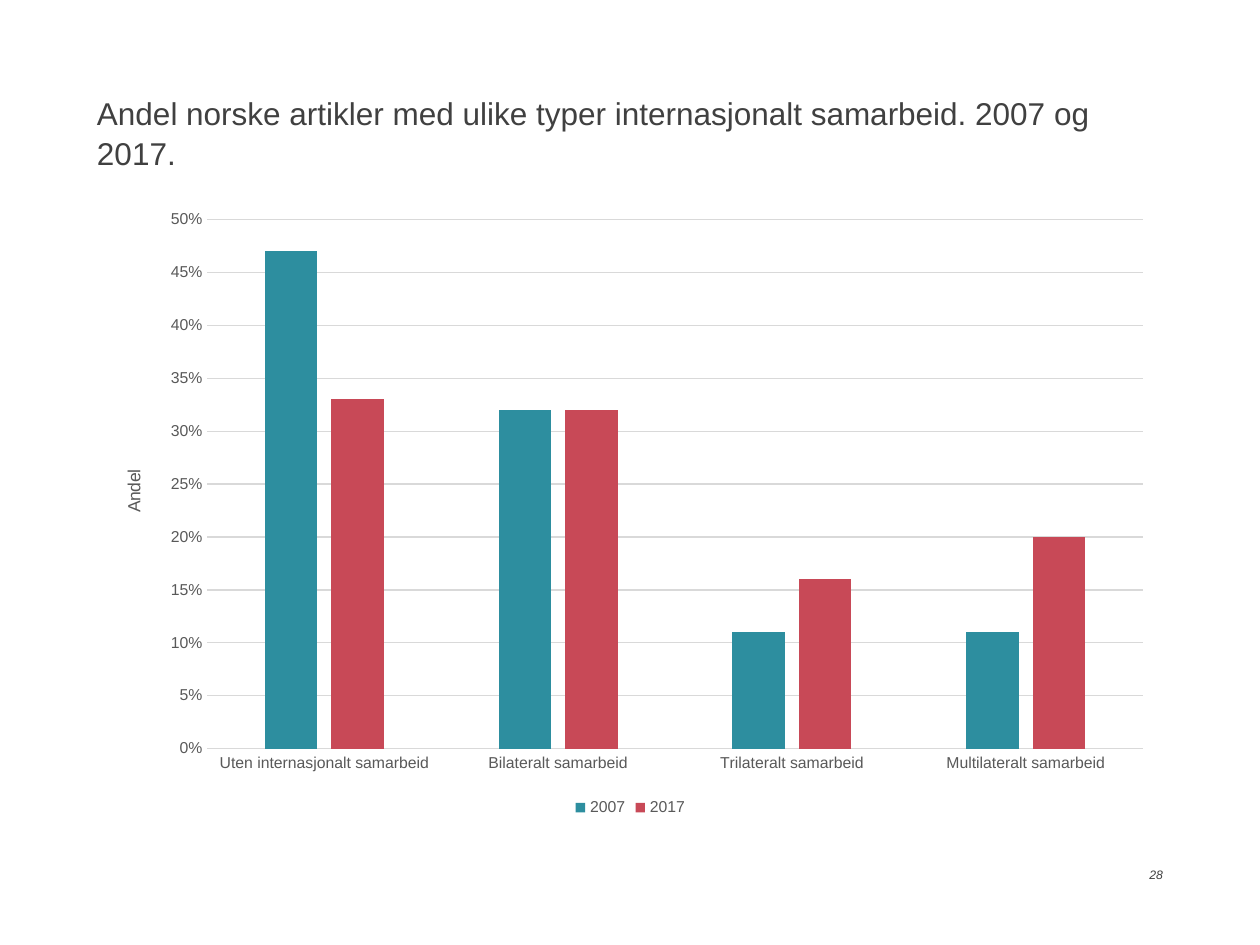
import pptx
import pptx.chart.data
import pptx.dml.color
import pptx.enum.chart
import pptx.enum.text
import pptx.util

SCALE = 914400 // 126
FACE = "Arial"
DARK, GREY, RULE = "404040", "595959", "D9D9D9"
CATS = [f"{kind} samarbeid" for kind in
        ("Uten internasjonalt", "Bilateralt", "Trilateralt", "Multilateralt")]
SERIES = [
    ("2007", (0.47, 0.32, 0.11, 0.11), "2D8E9F"),
    ("2017", (0.33, 0.32, 0.16, 0.20), "C84957"),
]


def px(*sizes):
    """Turn whole pixels into EMU."""
    return [pptx.util.Emu(size * SCALE) for size in sizes]


def tint(code):
    """Turn a hex string into a colour."""
    return pptx.dml.color.RGBColor.from_string(code)


def style(font, size, code, slant=False):
    """Set face, size and colour of a font."""
    font.name = FACE
    font.size = pptx.util.Pt(size)
    font.bold = False
    font.italic = slant
    font.color.rgb = tint(code)


def rule(line):
    """Give a chart line its thin grey look."""
    line.color.rgb = tint(RULE)
    line.width = pptx.util.Pt(0.75)


def add_text(slide, box, text, size, align, anchor, slant=False):
    """Add one wrapped paragraph without margins."""
    frame = slide.shapes.add_textbox(*px(*box)).text_frame
    frame.word_wrap = True
    frame.vertical_anchor = anchor
    frame.margin_left = frame.margin_right = 0
    frame.margin_top = frame.margin_bottom = 0
    frame.text = text
    para = frame.paragraphs[0]
    para.alignment = align
    para.line_spacing = 1.05
    style(para.runs[0].font, size, DARK, slant)


def style_axes(chart):
    """Format both axes, the grid and the axis title."""
    none = pptx.enum.chart.XL_TICK_MARK.NONE
    cat, val = chart.category_axis, chart.value_axis
    for axis in (cat, val):
        axis.major_tick_mark = axis.minor_tick_mark = none
        style(axis.tick_labels.font, 9, GREY)
    rule(cat.format.line)
    val.format.line.fill.background()
    rule(val.major_gridlines.format.line)
    val.minimum_scale, val.maximum_scale, val.major_unit = 0, 0.5, 0.05
    val.tick_labels.number_format = "0%"
    val.tick_labels.number_format_is_linked = False
    frame = val.axis_title.text_frame
    frame.text = "Andel"
    style(frame.paragraphs[0].runs[0].font, 10, GREY)
    frame._txBody.bodyPr.set("rot", "-5400000")


def add_bars(slide, box):
    """Add the clustered column chart with its legend."""
    data = pptx.chart.data.CategoryChartData(number_format="0%")
    data.categories = CATS
    for name, vals, _ in SERIES:
        data.add_series(name, vals)
    kind = pptx.enum.chart.XL_CHART_TYPE.COLUMN_CLUSTERED
    chart = slide.shapes.add_chart(kind, *px(*box), data).chart
    style(chart.font, 10, "000000")
    chart.has_title = False
    style_axes(chart)
    plot = chart.plots[0]
    plot.gap_width, plot.overlap = 219, -27
    plot.vary_by_categories = False
    for bars, (_, _, code) in zip(plot.series, SERIES):
        bars.format.fill.solid()
        bars.format.fill.fore_color.rgb = tint(code)
    chart.has_legend = True
    chart.legend.position = pptx.enum.chart.XL_LEGEND_POSITION.BOTTOM
    chart.legend.include_in_layout = False
    style(chart.legend.font, 9, GREY)


def main():
    """Build and save the slide."""
    deck = pptx.Presentation()
    deck.slide_width, deck.slide_height = px(1260, 945)
    slide = deck.slides.add_slide(deck.slide_layouts[6])
    align, anchor = pptx.enum.text.PP_ALIGN, pptx.enum.text.MSO_ANCHOR
    add_text(slide, (97, 92, 1066, 50),
             "Andel norske artikler med ulike typer internasjonalt samarbeid. "
             "2007 og 2017.", 18, align.LEFT, anchor.TOP)
    add_text(slide, (1116, 867, 47, 15), "28", 7, align.RIGHT,
             anchor.MIDDLE, slant=True)
    add_bars(slide, (97, 198, 1067, 624))
    deck.save("out.pptx")


if __name__ == "__main__":
    main()
